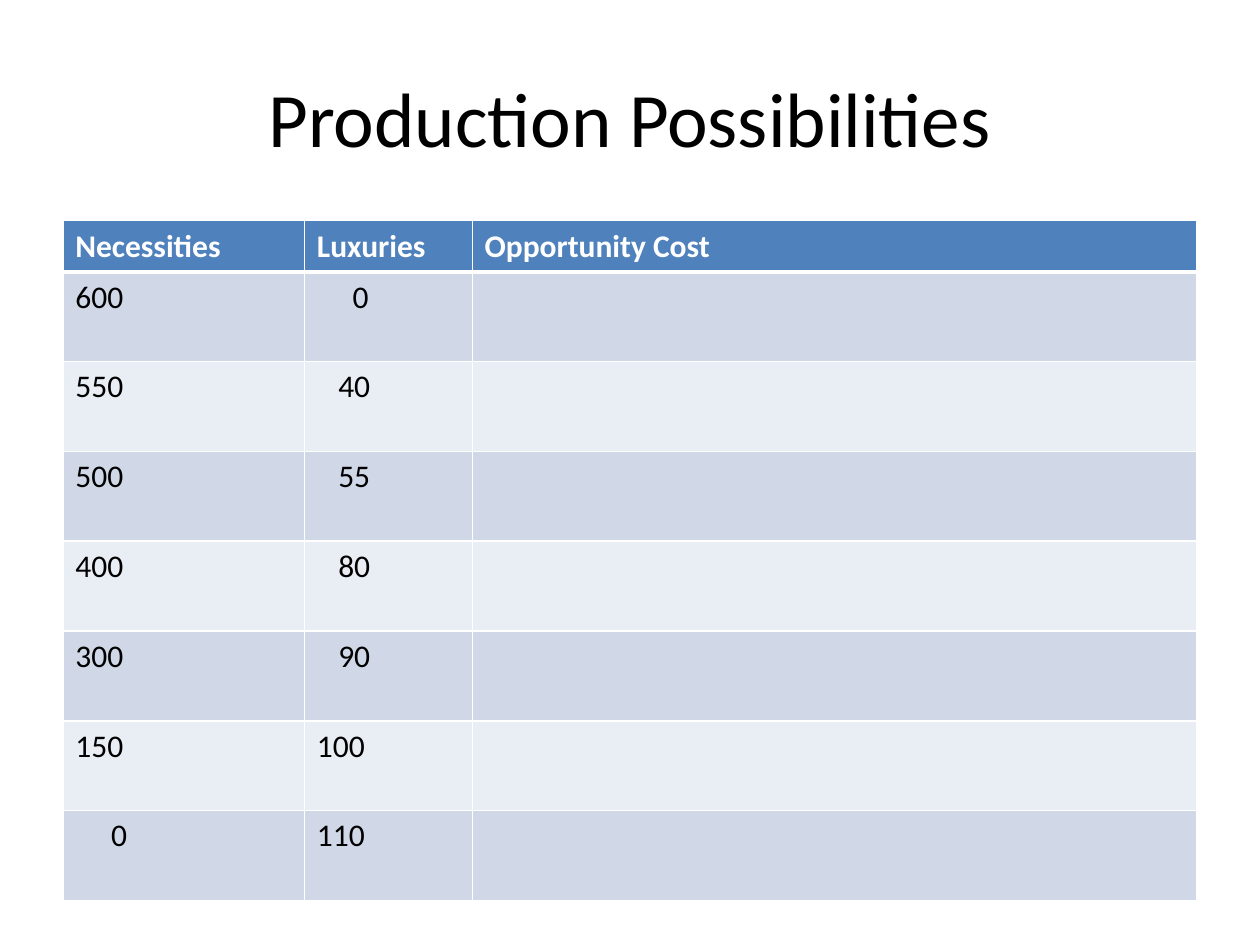
from lxml import etree
from pptx import Presentation
from pptx.dml.color import RGBColor
from pptx.enum import text
from pptx.oxml import ns
from pptx.util import Cm, Pt

TITLE = "Production Possibilities"
HEADINGS = ("Necessities", "Luxuries", "Opportunity Cost")
POSSIBILITIES = [
    ("600", "0", ""),
    ("550", "40", ""),
    ("500", "55", ""),
    ("400", "80", ""),
    ("300", "90", ""),
    ("150", "100", ""),
    ("0", "110", ""),
]
COLUMN_WIDTHS = (4.87, 3.38, 14.61)
HEADING_HEIGHT, ROW_HEIGHT = 1.03, 1.81
CELL_MARGIN = 0.25
DIGIT_INDENTS = {1: 0.72, 2: 0.43}

BLACK = RGBColor(0x00, 0x00, 0x00)
WHITE = RGBColor(0xFF, 0xFF, 0xFF)
BLUE = RGBColor(0x4F, 0x81, 0xBD)
BANDS = (RGBColor(0xD0, 0xD8, 0xE8), RGBColor(0xE9, 0xED, 0xF4))


def write(frame, words, size=18, color=BLACK, bold=False, align=text.PP_ALIGN.LEFT):
    paragraph = frame.paragraphs[0]
    paragraph.alignment = align
    if not words:
        paragraph.font.size = Pt(size)
        return
    run = paragraph.add_run()
    run.text = words
    run.font.name = "Calibri"
    run.font.size = Pt(size)
    run.font.bold = bold
    run.font.color.rgb = color


def add_borders(cell, widths):
    properties = cell._tc.get_or_add_tcPr()
    for side, width in widths.items():
        line = etree.SubElement(properties, ns.qn(f"a:ln{side}"), w=str(Pt(width)))
        fill = etree.SubElement(line, ns.qn("a:solidFill"))
        etree.SubElement(fill, ns.qn("a:srgbClr"), val=str(WHITE))


def main():
    deck = Presentation()
    deck.slide_width, deck.slide_height = Cm(25.4), Cm(19.05)
    slide = deck.slides.add_slide(deck.slide_layouts[6])

    title = slide.shapes.add_textbox(Cm(1.27), Cm(0.76), Cm(22.86), Cm(3.18)).text_frame
    title.word_wrap = True
    title.vertical_anchor = text.MSO_ANCHOR.MIDDLE
    write(title, TITLE, size=44, align=text.PP_ALIGN.CENTER)

    rows = [HEADINGS, *POSSIBILITIES]
    heights = [HEADING_HEIGHT] + [ROW_HEIGHT] * len(POSSIBILITIES)
    schedule = slide.shapes.add_table(
        len(rows), len(HEADINGS), Cm(1.27), Cm(4.45),
        Cm(sum(COLUMN_WIDTHS)), Cm(sum(heights))).table
    for column, width in zip(schedule.columns, COLUMN_WIDTHS):
        column.width = Cm(width)

    for r, (values, height) in enumerate(zip(rows, heights)):
        schedule.rows[r].height = Cm(height)
        heading = r == 0
        for c, value in enumerate(values):
            cell = schedule.cell(r, c)
            add_borders(cell, {"L": 1, "R": 1, "T": 3 if r == 1 else 1,
                               "B": 3 if heading else 1})
            cell.fill.solid()
            cell.fill.fore_color.rgb = BLUE if heading else BANDS[(r - 1) % 2]
            cell.margin_left = Cm(CELL_MARGIN + DIGIT_INDENTS.get(len(value), 0))
            write(cell.text_frame, value, color=WHITE if heading else BLACK, bold=heading)

    deck.save("out.pptx")


if __name__ == "__main__":
    main()
